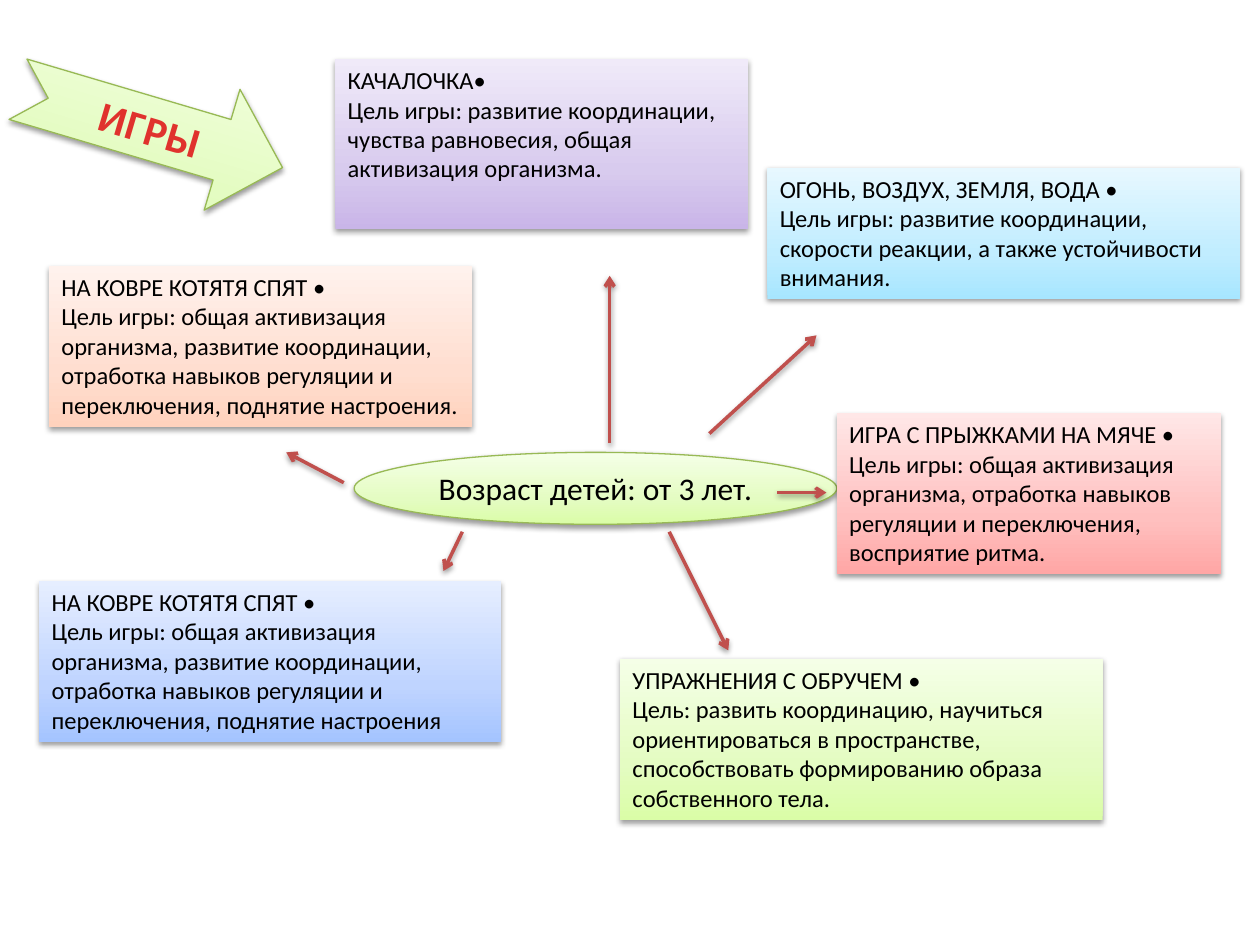
"""Build a slide that maps movement games around the age of the children."""
from lxml import etree
from pptx import Presentation
from pptx.dml.color import RGBColor
from pptx.enum.shapes import MSO_CONNECTOR, MSO_SHAPE
from pptx.enum.text import MSO_ANCHOR, PP_ALIGN
from pptx.oxml import parse_xml
from pptx.oxml.ns import nsdecls, qn
from pptx.util import Cm, Pt

RECTANGLE = MSO_SHAPE.RECTANGLE
OVAL = MSO_SHAPE.OVAL
NOTCHED_ARROW = MSO_SHAPE.NOTCHED_RIGHT_ARROW
STRAIGHT = MSO_CONNECTOR.STRAIGHT
TOP, MIDDLE = MSO_ANCHOR.TOP, MSO_ANCHOR.MIDDLE
LEFT, CENTER = PP_ALIGN.LEFT, PP_ALIGN.CENTER

COLORS = {"text": "000000", "heading": "E0322D", "outline": "98B955", "pointer": "C0504D"}
GRADIENTS = {
    "purple": ("C9B5E8", "D8CBEE", "F0EAF9"),
    "orange": ("FFD2BD", "FFDED0", "FFF2ED"),
    "cyan": ("A7E6FF", "C1EDFF", "E7F8FF"),
    "blue": ("A4C4FF", "BFD4FF", "E6EEFF"),
    "red": ("FFA6A5", "FFC0BF", "FFE7E7"),
    "green": ("DAFDA7", "E4FCC2", "F5FFE7"),
}
STOPS = (0, 35000, 100000)


def add_shadow(effects):
    effects.append(parse_xml(
        f'<a:outerShdw {nsdecls("a")} blurRad="40000" dist="20000" dir="5400000" rotWithShape="0">'
        '<a:srgbClr val="000000"><a:alpha val="38000"/></a:srgbClr></a:outerShdw>'))


def add_panel(kind, position, gradient, text, size, color, anchor, alignment):
    panel = slide.shapes.add_shape(kind, *map(Cm, position))
    panel.fill.gradient()
    panel.fill.gradient_angle = 90
    stops = panel.fill._fill._gradFill.find(qn("a:gsLst"))
    stops.clear()
    for stop, shade in zip(STOPS, GRADIENTS[gradient]):
        entry = etree.SubElement(stops, qn("a:gs"), pos=str(stop))
        etree.SubElement(entry, qn("a:srgbClr"), val=shade)
    if kind == RECTANGLE:
        panel.line.fill.background()
    else:
        panel.line.color.rgb = RGBColor.from_string(COLORS["outline"])
        panel.line.width = Pt(0.75)
    panel.shadow.inherit = False
    add_shadow(panel._element.spPr.find(qn("a:effectLst")))
    frame = panel.text_frame
    frame.word_wrap = kind != OVAL
    frame.vertical_anchor = anchor
    paragraph = frame.paragraphs[0]
    paragraph.text = text
    paragraph.alignment = alignment
    paragraph.font.name = "Calibri"
    paragraph.font.size = Pt(size)
    paragraph.font.color.rgb = RGBColor.from_string(COLORS[color])
    return panel


presentation = Presentation()
presentation.slide_width, presentation.slide_height = Cm(25.4), Cm(19.05)
slide = presentation.slides.add_slide(presentation.slide_layouts[6])

add_panel(OVAL, (7.14, 9.12, 9.73, 1.45), "green", "Возраст детей: от 3 лет.",
          18, "text", MIDDLE, CENTER)

games = [
    ((6.76, 1.19, 8.33, 3.43), "purple", "КАЧАЛОЧКА•",
     "Цель игры: развитие координации, чувства равновесия, общая активизация организма."),
    ((0.99, 5.36, 8.53, 3.25), "orange", "НА КОВРЕ КОТЯТЯ СПЯТ •",
     "Цель игры: общая активизация организма, развитие координации, отработка навыков "
     "регуляции и переключения, поднятие настроения."),
    ((15.47, 3.38, 9.53, 2.64), "cyan", "ОГОНЬ, ВОЗДУХ, ЗЕМЛЯ, ВОДА •",
     "Цель игры: развитие координации, скорости реакции, а также устойчивости внимания."),
    ((0.79, 11.71, 9.32, 3.25), "blue", "НА КОВРЕ КОТЯТЯ СПЯТ •",
     "Цель игры: общая активизация организма, развитие координации, отработка навыков "
     "регуляции и переключения, поднятие настроения"),
    ((16.87, 8.33, 7.75, 3.25), "red", "ИГРА С ПРЫЖКАМИ НА МЯЧЕ •",
     "Цель игры: общая активизация организма, отработка навыков регуляции и переключения, "
     "восприятие ритма."),
    ((12.5, 13.28, 9.73, 3.25), "green", "УПРАЖНЕНИЯ С ОБРУЧЕМ •",
     "Цель: развить координацию, научиться ориентироваться в пространстве, способствовать "
     "формированию образа собственного тела."),
]
for position, gradient, game, goal in games:
    add_panel(RECTANGLE, position, gradient, f"{game}\v{goal}", 14, "text", TOP, LEFT)

pointers = [
    (12.29, 8.94, 12.29, 5.56),
    (14.3, 8.74, 16.46, 6.76),
    (6.93, 9.73, 5.77, 9.12),
    (13.49, 10.72, 14.68, 13.11),
    (9.32, 10.72, 8.94, 11.51),
    (15.67, 9.93, 16.66, 9.93),
]
for ends in pointers:
    pointer = slide.shapes.add_connector(STRAIGHT, *map(Cm, ends))
    pointer.line.color.rgb = RGBColor.from_string(COLORS["pointer"])
    pointer.line.width = Pt(2)
    etree.SubElement(pointer.line._get_or_add_ln(), qn("a:tailEnd"), type="arrow")
    add_shadow(etree.SubElement(pointer._element.spPr, qn("a:effectLst")))

heading = add_panel(NOTCHED_ARROW, (0.25, 1.32, 5.56, 2.54), "green", "ИГРЫ",
                    24, "heading", MIDDLE, CENTER)
heading.rotation = 16.5
heading_paragraph = heading.text_frame.paragraphs[0]
heading_paragraph.font.bold = True
heading_paragraph.runs[0]._r.get_or_add_rPr().set("spc", "50")

presentation.save("out.pptx")
